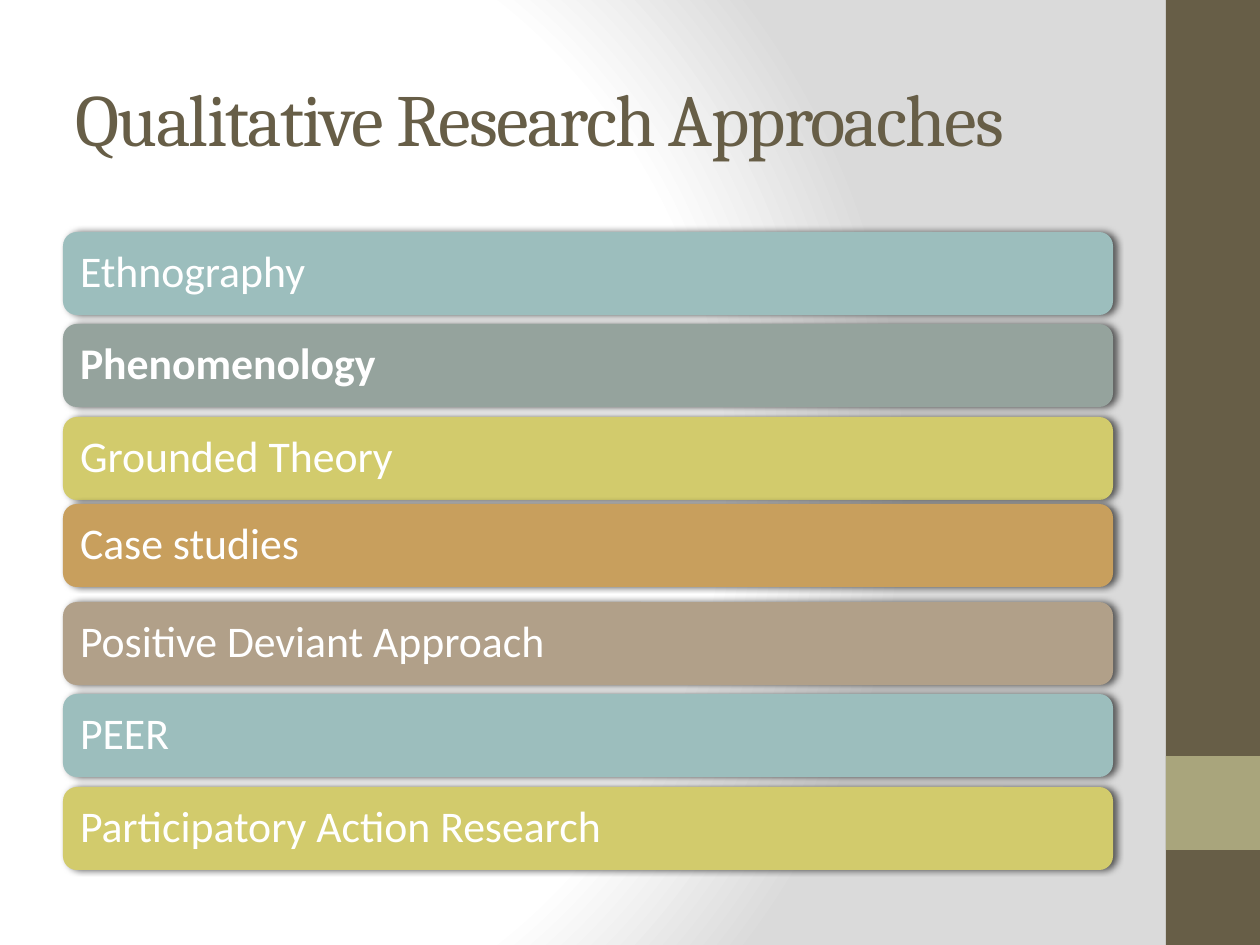
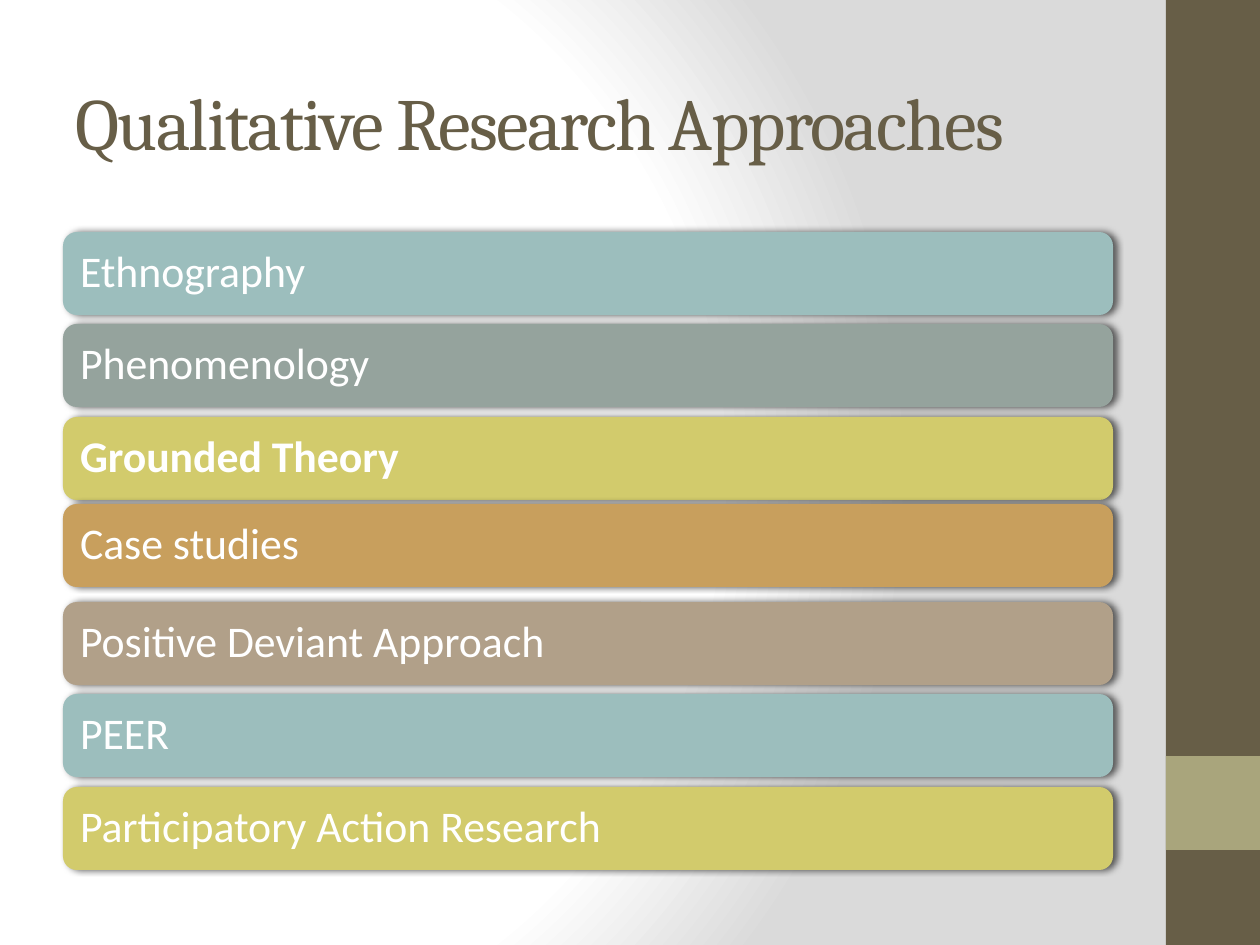
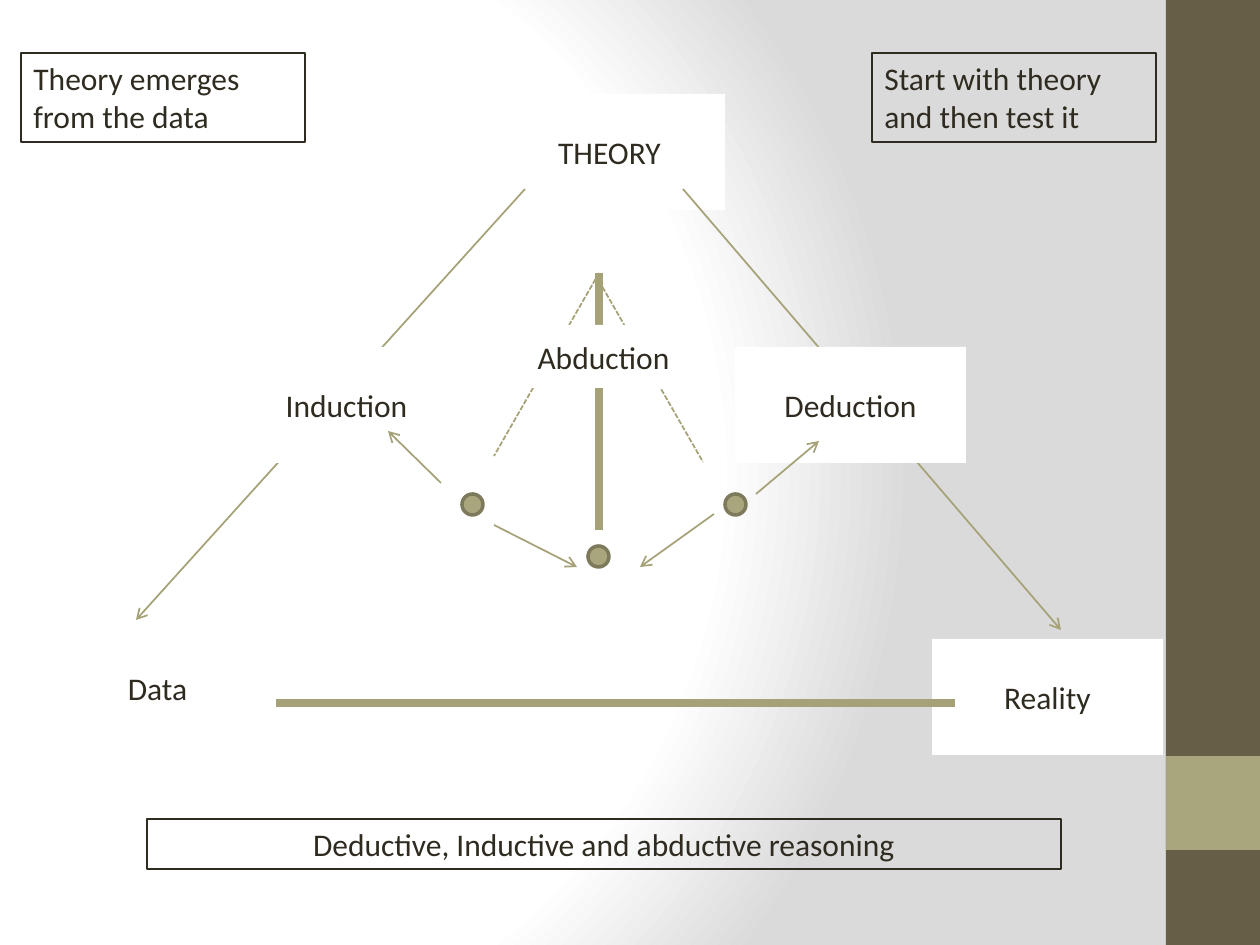
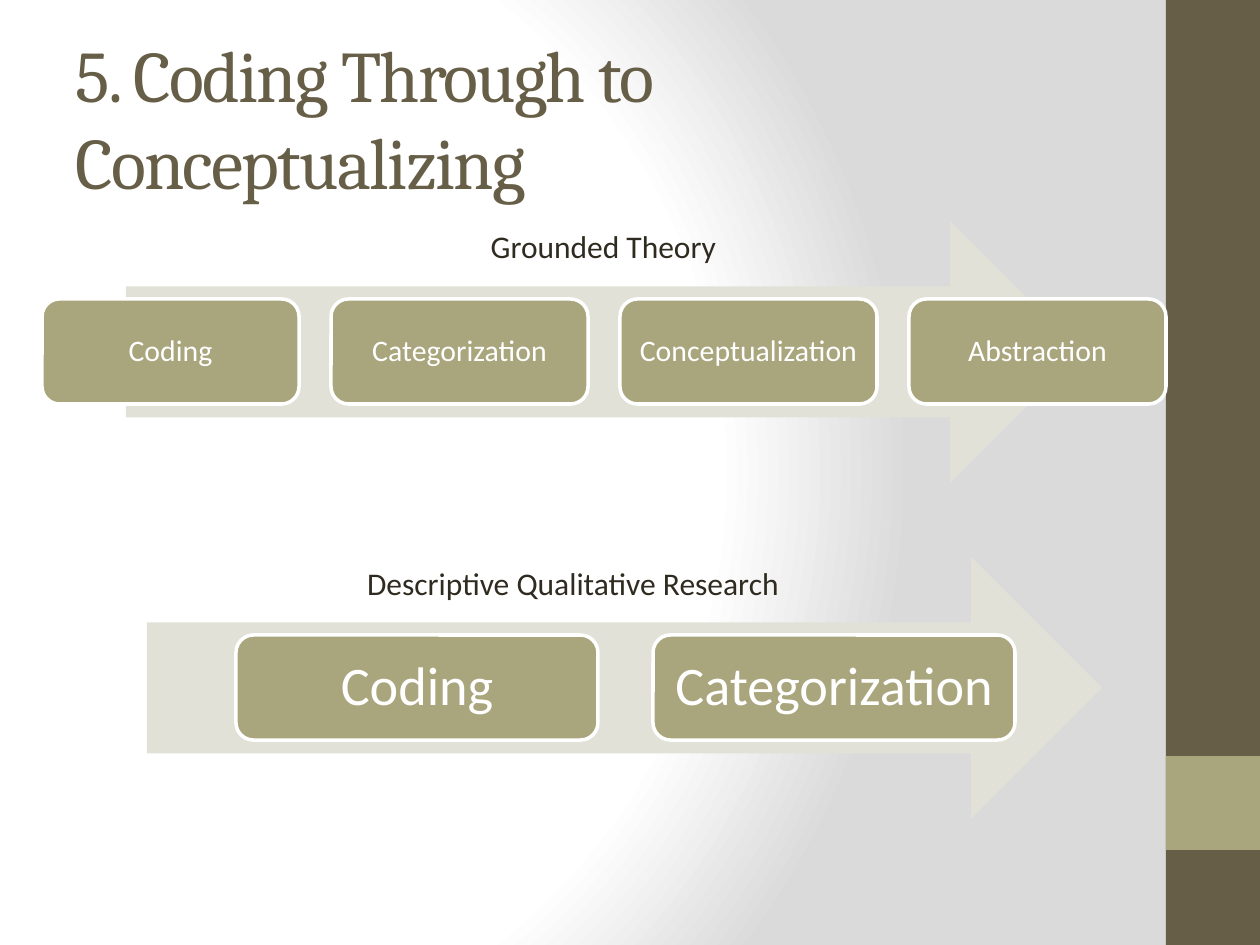
from pptx import Presentation, util as u
from pptx.dml.color import RGBColor
from pptx.enum import dml, shapes, text
from pptx.oxml import parse_xml
from pptx.oxml.ns import nsdecls, qn

PX = 914400 / 126
KIND = shapes.MSO_SHAPE
LEFT, MID = text.PP_ALIGN.LEFT, text.PP_ALIGN.CENTER
TOP, HALF = text.MSO_ANCHOR.TOP, text.MSO_ANCHOR.MIDDLE
WHITE, INK, BROWN, SAGE = "FFFFFF", "2F2B20", "675E47", "A9A57C"
RULE, RIM, PALE = "A6A278", "7D7A5C", "E2E1D7"
TEAL, LIME = "9CBEBD", "D2CB6C"

BANDS = [((1166, 0, 94, 945), BROWN), ((1166, 756, 94, 94), SAGE)]
STOPS = [(0, WHITE), (75, WHITE), (100, "DADADA")]

METHODS = [
    ("Ethnography", TEAL, 0),
    ("Phenomenology", "95A39D", 0),
    ("Grounded Theory", LIME, 0),
    ("Case studies", "C89F5D", -5),
    ("Positive Deviant Approach", "B1A089", 0),
    ("PEER", TEAL, 0),
    ("Participatory Action Research", LIME, 0),
]
LISTS = [(38, "Phenomenology"), (42, "Grounded Theory")]

ENDS = [("THEORY", 494, 94), ("Reality", 932, 639), ("Data", 42, 630)]
MODES = [("Induction", 231, 347), ("Deduction", 735, 347)]
SIDES = [((683, 189), (1061, 630)), ((525, 189), (136, 620))]
BARS = [((955, 703), (276, 703)), ((599, 273), (599, 530))]
DASHES = [((599, 281), (703, 462)), ((599, 273), (494, 456))]
TURNS = [
    ((494, 525), (577, 567)),
    ((441, 483), (388, 431)),
    ((714, 514), (640, 567)),
    ((756, 494), (819, 441)),
]
DOTS = [(462, 494), (725, 494), (588, 546)]
NOTES = [
    ("Deductive, Inductive and abductive reasoning", (147, 819, 914, 50), MID),
    ("Theory emerges from the data", (21, 53, 284, 89), LEFT),
    ("Start with theory and then test it", (872, 53, 284, 89), LEFT),
]

FLOWS = [
    {"label": "Grounded Theory", "place": (388, 221, 431, 50),
     "arrow": (126, 221), "start": 42, "wide": 257, "step": 289,
     "size": 17, "pad": 9,
     "steps": ["Coding", "Categorization", "Conceptualization", "Abstraction"]},
    {"label": "Descriptive Qualitative Research", "place": (305, 558, 536, 50),
     "arrow": (147, 557), "start": 236, "wide": 362, "step": 417,
     "size": 31, "pad": 15,
     "steps": ["Coding", "Categorization"]},
]


def px(n):
    return u.Emu(round(n * PX))


def tint(code):
    return RGBColor.from_string(code)


def apply(item, values):
    for name, value in values.items():
        setattr(item, name, value)


def write(shape, words, size=18, color=INK, font="Calibri", bold=False,
          align=MID, anchor=HALF, pad=None, lead=None, track=None):
    frame = shape.text_frame
    apply(frame, {"word_wrap": True, "vertical_anchor": anchor})
    if pad:
        sides = ("left", "right", "top", "bottom")
        apply(frame, {f"margin_{side}": px(pad) for side in sides})
    para = frame.paragraphs[0]
    apply(para, {"alignment": align, "line_spacing": lead})
    run = para.add_run()
    run.text = words
    apply(run.font, {"name": font, "size": u.Pt(size), "bold": bold})
    run.font.color.rgb = tint(color)
    if track:
        run.font._element.set("spc", str(track))


def draw(slide, kind, box, fill=None, edge=None, width=1):
    shape = slide.shapes.add_shape(kind, *map(px, box))
    shape.shadow.inherit = False
    if fill:
        shape.fill.solid()
        shape.fill.fore_color.rgb = tint(fill)
    else:
        shape.fill.background()
    if edge:
        shape.line.color.rgb = tint(edge)
        shape.line.width = u.Pt(width)
    else:
        shape.line.fill.background()
    return shape


def label(slide, box, words, **look):
    write(slide.shapes.add_textbox(*map(px, box)), words, **look)


def title(slide, words, top=38, size=42):
    label(slide, (63, top, 1050, 158), words, size=size, color=BROWN,
          font="Cambria", align=LEFT, track=-100)


def link(slide, ends, width=1, dash=False, head=False):
    points = [px(n) for point in ends for n in point]
    line = slide.shapes.add_connector(shapes.MSO_CONNECTOR.STRAIGHT, *points)
    line.line.color.rgb = tint(RULE)
    line.line.width = u.Pt(width)
    if dash:
        line.line.dash_style = dml.MSO_LINE.SQUARE_DOT
    if head:
        tip = parse_xml(f'<a:tailEnd {nsdecls("a")} type="arrow"/>')
        line.line._get_or_add_ln().append(tip)
    line._element.spPr.append(parse_xml(f'<a:effectLst {nsdecls("a")}/>'))


def shade(shape):
    effects = shape._element.spPr.find(qn("a:effectLst"))
    effects.append(parse_xml(
        f'<a:outerShdw {nsdecls("a")} blurRad="50800" dist="25400" dir="0" '
        'rotWithShape="0"><a:srgbClr val="000000"><a:alpha val="60000"/>'
        '</a:srgbClr></a:outerShdw>'))


def backdrop(master):
    fill = master.background.fill
    fill.solid()
    stops = "".join(
        f'<a:gs pos="{pos * 1000}"><a:srgbClr val="{code}"/></a:gs>'
        for pos, code in STOPS)
    blend = parse_xml(
        f'<a:gradFill {nsdecls("a")} rotWithShape="1"><a:gsLst>{stops}</a:gsLst>'
        '<a:path path="circle"><a:fillToRect l="20000" t="50000" r="100000" '
        'b="50000"/></a:path></a:gradFill>')
    back = master.element.cSld.bg.bgPr
    back.replace(back[0], blend)


def methods(slide, top, bold):
    title(slide, "Qualitative Research Approaches", top)
    for i, (name, color, shift) in enumerate(METHODS):
        box = (63, 232 + i * 185 // 2 + shift, 1050, 83)
        bar = draw(slide, KIND.ROUNDED_RECTANGLE, box, color)
        shade(bar)
        write(bar, name, size=25, color=WHITE, bold=name == bold,
              align=LEFT, pad=13, lead=0.9)


def node(slide, name, left, top, wide=231, high=116):
    write(draw(slide, KIND.RECTANGLE, (left, top, wide, high), WHITE), name)


def reasoning(slide):
    for end in ENDS:
        node(slide, *end)
    for ends in SIDES:
        link(slide, ends, head=True)
    for ends in BARS:
        link(slide, ends, width=4.5)
    for ends in DASHES:
        link(slide, ends, dash=True)
    for mode in MODES:
        node(slide, *mode)
    for ends in TURNS:
        link(slide, ends, head=True)
    for dot in DOTS:
        draw(slide, KIND.OVAL, (*dot, 21, 21), SAGE, RIM, 2)
    node(slide, "Abduction", 514, 325, 179, 63)
    for words, box, align in NOTES:
        note = draw(slide, KIND.RECTANGLE, box, edge=INK, width=0.75)
        write(note, words, align=align, anchor=TOP)


def coding(slide):
    title(slide, "5. Coding Through to Conceptualizing", size=41.4)
    for flow in FLOWS:
        left, top = flow["arrow"]
        draw(slide, KIND.RIGHT_ARROW, (left, top, 955, 262), PALE)
        for i, name in enumerate(flow["steps"]):
            box = (flow["start"] + i * flow["step"], top + 78, flow["wide"], 105)
            step = draw(slide, KIND.ROUNDED_RECTANGLE, box, SAGE, WHITE, 2)
            write(step, name, size=flow["size"], color=WHITE,
                  pad=flow["pad"], lead=0.9)
        label(slide, flow["place"], flow["label"], anchor=TOP)


def main():
    deck = Presentation()
    apply(deck, {"slide_width": px(1260), "slide_height": px(945)})
    master = deck.slide_master
    backdrop(master)
    first, second, third, fourth = [
        deck.slides.add_slide(deck.slide_layouts[6]) for _ in range(4)]
    for box, color in BANDS:
        band = draw(first, KIND.RECTANGLE, box, color)
        master.element.cSld.spTree.append(band.element)
    for slide, (top, bold) in zip((first, second), LISTS):
        methods(slide, top, bold)
    reasoning(third)
    coding(fourth)
    deck.save("out.pptx")


if __name__ == "__main__":
    main()
